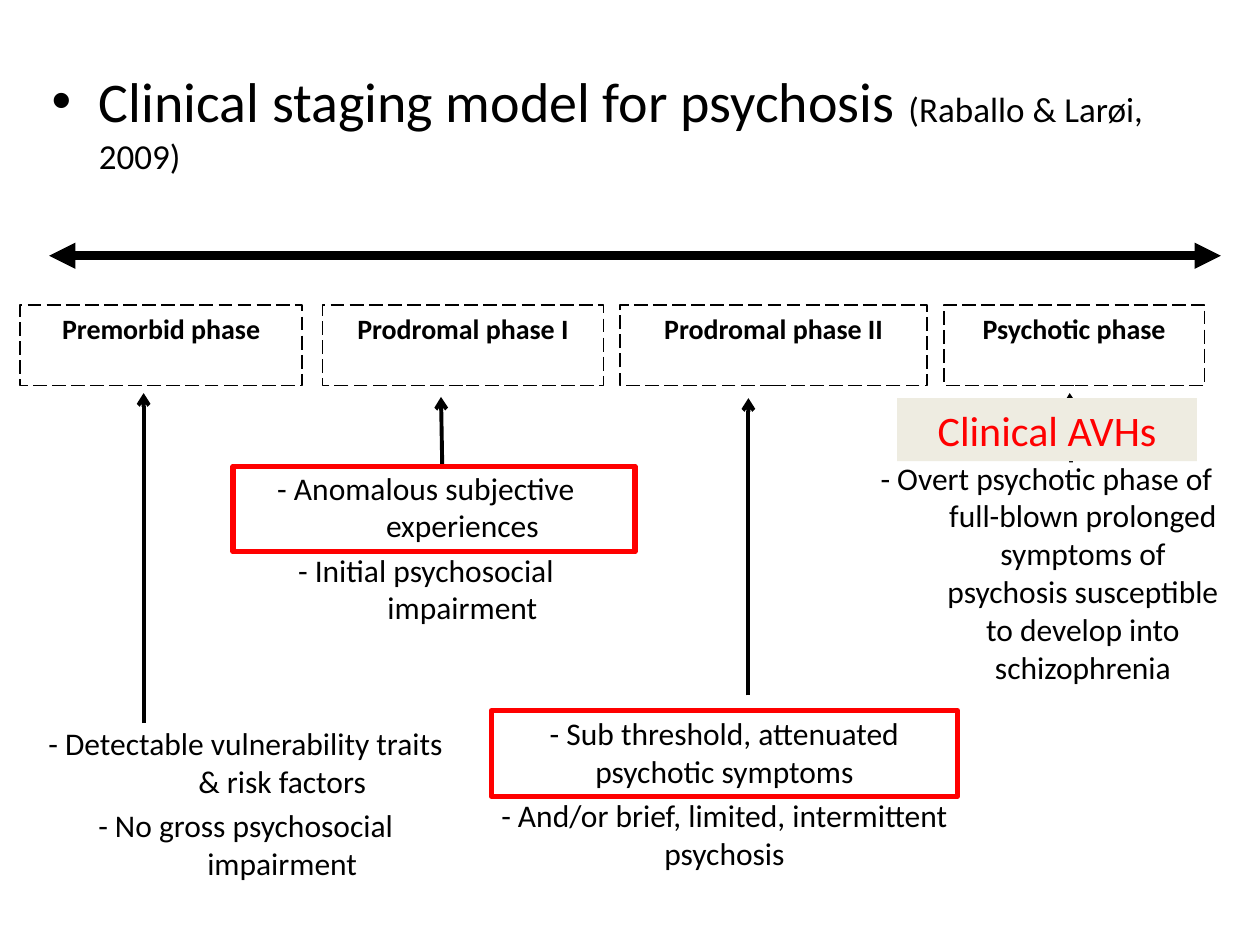
from dataclasses import dataclass

from lxml import etree
from pptx import Presentation
from pptx.dml.color import RGBColor
from pptx.enum.dml import MSO_LINE
from pptx.enum.shapes import MSO_CONNECTOR, MSO_SHAPE
from pptx.enum.text import MSO_ANCHOR, PP_ALIGN
from pptx.oxml.ns import qn
from pptx.util import Inches, Pt

RECTANGLE = MSO_SHAPE.RECTANGLE
STRAIGHT = MSO_CONNECTOR.STRAIGHT
LONG_DASH = MSO_LINE.LONG_DASH
TOP = MSO_ANCHOR.TOP
CENTER = PP_ALIGN.CENTER


@dataclass(frozen=True)
class Theme:
    font: str = "Calibri"
    ink: RGBColor = RGBColor(0x00, 0x00, 0x00)
    alert: RGBColor = RGBColor(0xFF, 0x00, 0x00)
    label_fill: RGBColor = RGBColor(0xEE, 0xEC, 0xE1)
    heading: Pt = Pt(32)
    label: Pt = Pt(24)
    citation: Pt = Pt(20)
    body: Pt = Pt(18)
    phase: Pt = Pt(16)
    paragraph_gap: Pt = Pt(3.6)


THEME = Theme()
HANGING = Inches(0.58)

# Phase name, left and width of each box in the row
PHASES = [
    ("Premorbid phase", 0.16, 2.24),
    ("Prodromal phase I", 2.56, 2.23),
    ("Prodromal phase II", 4.92, 2.44),
    ("Psychotic phase", 7.49, 2.07),
]
# Box, hanging indent and lines of each description
DESCRIPTIONS = [
    ((0.23, 5.7, 3.44, 1.43), HANGING,
     ["- Detectable vulnerability traits & risk factors",
      "- No gross psychosocial impairment"]),
    ((1.72, 3.67, 3.32, 1.41), HANGING,
     ["- Anomalous subjective experiences",
      "- Initial psychosocial impairment"]),
    ((3.82, 5.62, 3.86, 1.51), 0,
     ["- Sub threshold, attenuated psychotic symptoms",
      "- And/or brief, limited, intermittent psychosis"]),
    ((6.81, 3.59, 2.99, 2.58), HANGING,
     ["- Overt psychotic phase of full-blown prolonged symptoms of "
      "psychosis susceptible to develop into schizophrenia"]),
]
# Start and end of the arrows from descriptions to phases
PHASE_ARROWS = [
    ((1.14, 5.74), (1.14, 3.12)),
    ((3.51, 3.7), (3.5, 3.15)),
    ((5.94, 5.52), (5.94, 3.16)),
    ((8.5, 3.67), (8.49, 3.12)),
]
HIGHLIGHTS = [(1.85, 3.7, 3.19, 0.68), (3.9, 5.64, 3.7, 0.68)]


def to_inches(values):
    return [Inches(value) for value in values]


def add_run(paragraph, text, size, color=THEME.ink, bold=False):
    run = paragraph.add_run()
    run.text = text
    run.font.color.rgb = color
    font_format = {"name": THEME.font, "size": size, "bold": bold}
    for name, value in font_format.items():
        setattr(run.font, name, value)


def add_rectangle(slide, box, fill=None, line=None, width=1, dash=None):
    shape = slide.shapes.add_shape(RECTANGLE, *to_inches(box))
    shape.shadow.inherit = False
    if fill is None:
        shape.fill.background()
    else:
        shape.fill.solid()
        shape.fill.fore_color.rgb = fill
    if line is None:
        shape.line.fill.background()
    else:
        shape.line.color.rgb = line
        shape.line.width = Pt(width)
        shape.line.dash_style = dash
    return shape


def write_centred(shape, text, size, color=THEME.ink, bold=False):
    frame = shape.text_frame
    frame.word_wrap = True
    frame.vertical_anchor = TOP
    paragraph = frame.paragraphs[0]
    paragraph.alignment = CENTER
    add_run(paragraph, text, size, color, bold)


def add_arrow(slide, start, end, width, **arrowheads):
    connector = slide.shapes.add_connector(STRAIGHT, *to_inches(start + end))
    connector.line.color.rgb = THEME.ink
    connector.line.width = Pt(width)
    line = connector.line._get_or_add_ln()
    for tag, kind in arrowheads.items():
        etree.SubElement(line, qn(f"a:{tag}"), type=kind)
    etree.SubElement(connector._element.spPr, qn("a:effectLst"))


def add_heading(slide, box):
    # The slide has no title, only a body with one bullet
    title = slide.shapes.title
    title._element.getparent().remove(title._element)
    body = slide.placeholders[1]
    for name, value in zip(("left", "top", "width", "height"), to_inches(box)):
        setattr(body, name, value)
    paragraph = body.text_frame.paragraphs[0]
    add_run(paragraph, "Clinical staging model for psychosis ", THEME.heading)
    add_run(paragraph, "(Raballo & Larøi, 2009)", THEME.citation)


def add_phase_row(slide, top, height):
    for name, left, width in PHASES:
        shape = add_rectangle(slide, (left, top, width, height),
                              line=THEME.ink, dash=LONG_DASH)
        write_centred(shape, name, THEME.phase, bold=True)


def add_description(slide, box, hanging, lines):
    frame = slide.shapes.add_textbox(*to_inches(box)).text_frame
    frame.word_wrap = True
    for index, text in enumerate(lines):
        paragraph = frame.add_paragraph() if index else frame.paragraphs[0]
        paragraph_format = {"alignment": CENTER,
                            "space_before": THEME.paragraph_gap}
        for name, value in paragraph_format.items():
            setattr(paragraph, name, value)
        if hanging:
            properties = paragraph._p.get_or_add_pPr()
            properties.set("marL", str(hanging))
            properties.set("indent", str(-hanging))
        add_run(paragraph, text, THEME.body)


def add_clinical_label(slide, box):
    label = add_rectangle(slide, box, fill=THEME.label_fill)
    write_centred(label, "Clinical AVHs", THEME.label, THEME.alert)


def main():
    presentation = Presentation()
    presentation.slide_width = Inches(10)
    presentation.slide_height = Inches(7.5)
    slide = presentation.slides.add_slide(presentation.slide_layouts[1])

    add_heading(slide, (0.31, 0.48, 9.45, 6.23))
    # Time axis and the phases along it
    add_arrow(slide, (0.39, 2.03), (9.69, 2.03), 5,
              headEnd="triangle", tailEnd="triangle")
    add_phase_row(slide, 2.42, 0.64)
    # What marks each phase
    for box, hanging, lines in DESCRIPTIONS:
        add_description(slide, box, hanging, lines)
    for start, end in PHASE_ARROWS:
        add_arrow(slide, start, end, 2.25, tailEnd="arrow")
    # Emphasis
    for box in HIGHLIGHTS:
        add_rectangle(slide, box, line=THEME.alert, width=3)
    add_clinical_label(slide, (7.12, 3.16, 2.38, 0.5))

    presentation.save("out.pptx")


if __name__ == "__main__":
    main()
